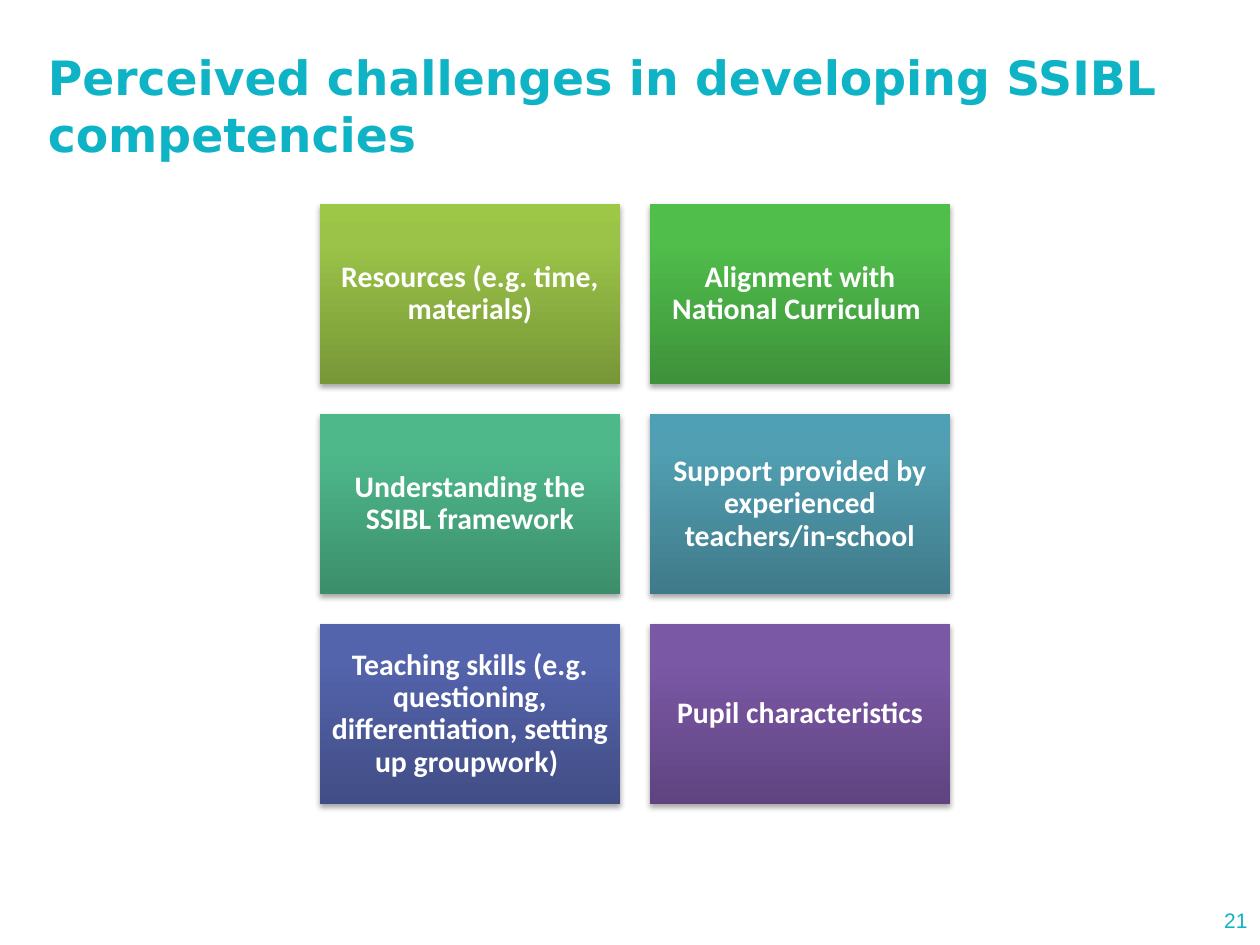
from lxml import etree
from pptx import Presentation
from pptx.dml.color import RGBColor
from pptx.enum.shapes import MSO_SHAPE
from pptx.enum.text import MSO_ANCHOR, PP_ALIGN
from pptx.oxml.ns import qn
from pptx.util import Pt

RECTANGLE = MSO_SHAPE.RECTANGLE
MIDDLE = MSO_ANCHOR.MIDDLE
LEFT, CENTER, RIGHT = PP_ALIGN.LEFT, PP_ALIGN.CENTER, PP_ALIGN.RIGHT

TEAL = "0EB3C5"
WHITE = "FFFFFF"

# Card grid, in points
COLUMNS = 2
GRID_LEFT, GRID_TOP = 182.86, 116.7
CARD_WIDTH, CARD_HEIGHT, GAP = 171.43, 102.86, 17.14
GRADIENT_POSITIONS = (0, 80, 100)

# Text and gradient colours, from the bottom of the card to the top
CHALLENGES = [
    ("Resources (e.g. time, materials)", ("779737", "9BC348", "9DC746")),
    ("Alignment with National Curriculum ", ("3E923A", "50BE4B", "4FC149")),
    ("Understanding the SSIBL framework", ("3C8E6B", "4EB88B", "4CBB8C")),
    ("Support provided by experienced teachers/in-school",
     ("3F7A89", "519FB2", "50A0B5")),
    ("Teaching skills (e.g. questioning, differentiation, setting up groupwork) ",
     ("414D85", "5464AC", "5363AF")),
    ("Pupil characteristics", ("5F4480", "7B58A6", "7C57A8")),
]


def color(hex_value):
    return RGBColor.from_string(hex_value)


def write_text(shape, text, *, size, font, hex_color, bold=False,
               align=LEFT, line_spacing=1.0, inset=None):
    frame = shape.text_frame
    frame.word_wrap = True
    frame.vertical_anchor = MIDDLE
    if inset is not None:
        frame.margin_left = frame.margin_right = Pt(inset)
        frame.margin_top = frame.margin_bottom = Pt(inset)
    paragraph = frame.paragraphs[0]
    paragraph.alignment = align
    paragraph.line_spacing = line_spacing
    run = paragraph.add_run()
    run.text = text
    run.font.size = Pt(size)
    run.font.name = font
    run.font.bold = bold
    run.font.color.rgb = color(hex_color)


def add_text(slide, text, left, top, width, height, **text_format):
    box = slide.shapes.add_textbox(Pt(left), Pt(top), Pt(width), Pt(height))
    write_text(box, text, **text_format)


def add_color_element(parent, hex_value):
    return etree.SubElement(parent, qn("a:srgbClr"), val=hex_value)


def set_gradient(shape, hex_colors):
    shape.fill.gradient()
    shape.fill.gradient_angle = 90
    stops = shape._element.spPr.find(qn("a:gradFill")).find(qn("a:gsLst"))
    for stop in list(stops):
        stops.remove(stop)
    for position, hex_value in zip(GRADIENT_POSITIONS, hex_colors):
        stop = etree.SubElement(stops, qn("a:gs"), pos=str(position * 1000))
        add_color_element(stop, hex_value)


def set_shadow(shape):
    shape.shadow.inherit = False
    effects = shape._element.spPr.find(qn("a:effectLst"))
    shadow = etree.SubElement(
        effects, qn("a:outerShdw"), blurRad=str(Pt(3.1)), dist=str(Pt(1.8)),
        dir="5400000", rotWithShape="0")
    shadow_color = add_color_element(shadow, "000000")
    etree.SubElement(shadow_color, qn("a:alpha"), val="35000")


def add_card(slide, text, hex_colors, left, top):
    card = slide.shapes.add_shape(
        RECTANGLE, Pt(left), Pt(top), Pt(CARD_WIDTH), Pt(CARD_HEIGHT))
    set_gradient(card, hex_colors)
    card.line.fill.background()
    set_shadow(card)
    write_text(card, text, size=17, font="Calibri", hex_color=WHITE, bold=True,
               align=CENTER, line_spacing=0.9, inset=5.1)


def main():
    presentation = Presentation()
    presentation.slide_width = Pt(720)
    presentation.slide_height = Pt(540)
    slide = presentation.slides.add_slide(presentation.slide_layouts[6])

    # Title
    add_text(slide, "Perceived challenges in developing SSIBL competencies",
             20.2, 15.1, 675.4, 90, size=27, font="DejaVu Sans",
             hex_color=TEAL, bold=True)

    # Grid of challenges
    for index, (text, hex_colors) in enumerate(CHALLENGES):
        row, column = divmod(index, COLUMNS)
        add_card(slide, text, hex_colors,
                 GRID_LEFT + column * (CARD_WIDTH + GAP),
                 GRID_TOP + row * (CARD_HEIGHT + GAP))

    # Slide number
    add_text(slide, "21", 576, 511.2, 144, 28.8, size=12, font="Arial",
             hex_color=TEAL, align=RIGHT)

    presentation.save("out.pptx")


if __name__ == "__main__":
    main()
